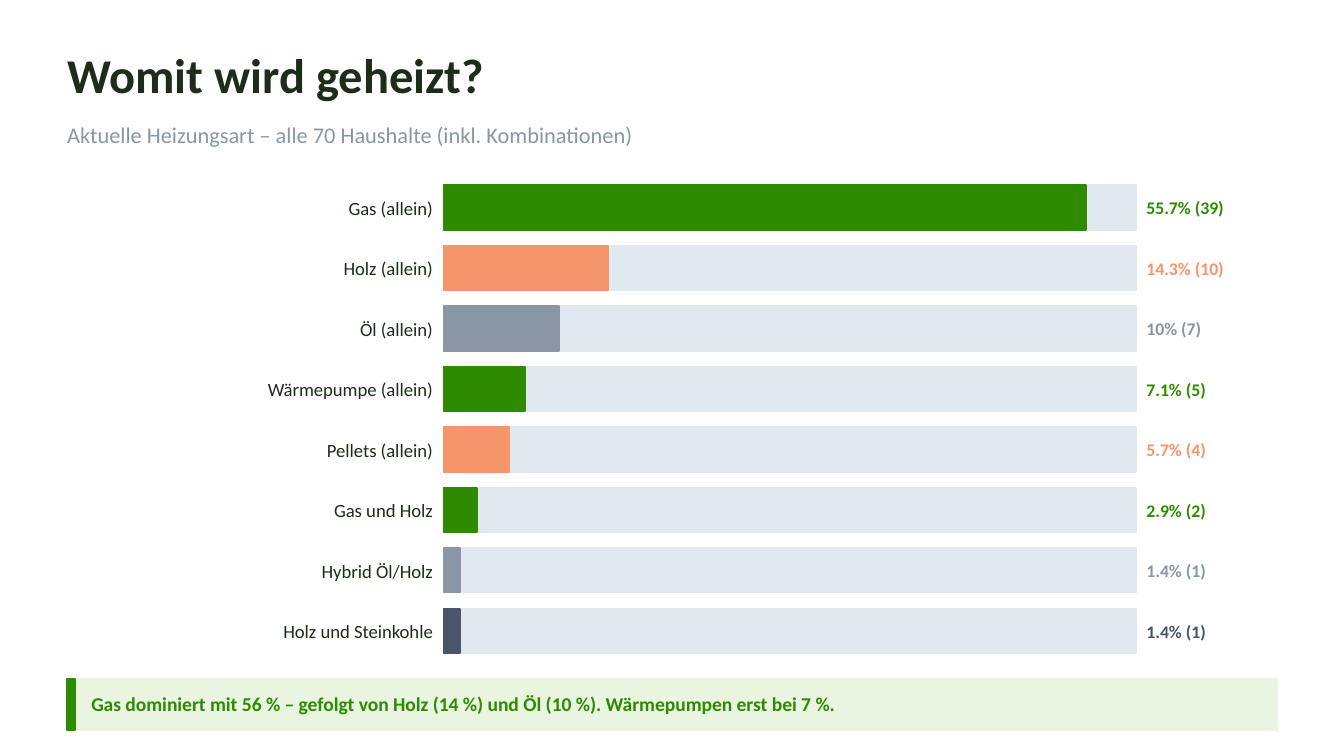
import pptx
import pptx.dml.color
import pptx.enum.shapes
import pptx.enum.text
import pptx.util
from pptx.util import Inches

COLORS = {
    "dark": "1D2D1A",
    "green": "2E8B00",
    "orange": "F4956A",
    "gray": "8896A5",
    "slate": "4A5568",
    "track": "E2E8F0",
    "pale": "E9F5E1",
}
ALIGN = pptx.enum.text.PP_ALIGN


def write_text(text, left, top, width, height, size, color,
               bold=False, align=ALIGN.LEFT, box=None):
    """Write one line into a new text box, or into the given placeholder."""
    if box is None:
        box = slide.shapes.add_textbox(0, 0, 0, 0)
    box.left, box.top = Inches(left), Inches(top)
    box.width, box.height = Inches(width), Inches(height)
    frame = box.text_frame
    frame.word_wrap = True
    frame.auto_size = pptx.enum.text.MSO_AUTO_SIZE.NONE
    frame.vertical_anchor = pptx.enum.text.MSO_ANCHOR.MIDDLE
    frame.margin_left = frame.margin_right = 0
    frame.margin_top = frame.margin_bottom = 0
    para = frame.paragraphs[0]
    para.alignment = align
    span = para.add_run()
    span.text = text
    span.font.name = "Calibri"
    span.font.size = pptx.util.Pt(size)
    span.font.bold = bold
    span.font.color.rgb = pptx.dml.color.RGBColor.from_string(COLORS[color])


def add_bar(left, top, width, height, color):
    bar = slide.shapes.add_shape(
        pptx.enum.shapes.MSO_SHAPE.RECTANGLE,
        Inches(left), Inches(top), Inches(width), Inches(height))
    bar.shadow.inherit = False
    rgb = pptx.dml.color.RGBColor.from_string(COLORS[color])
    bar.fill.solid()
    bar.fill.fore_color.rgb = rgb
    bar.line.color.rgb = rgb
    bar.line.width = pptx.util.Pt(1)


# A 16:9 page
deck = pptx.Presentation()
deck.slide_width = Inches(10)
deck.slide_height = Inches(10 * 9 / 16)
page_layout = deck.slide_layouts.get_by_name("Title Only")
slide = deck.slides.add_slide(page_layout)

# Title and subtitle
write_text("Womit wird geheizt?", 0.5, 0.28, 9, 0.55, size=26, color="dark",
           bold=True, box=slide.shapes.title)
write_text("Aktuelle Heizungsart – alle 70 Haushalte (inkl. Kombinationen)",
           0.5, 0.85, 9, 0.3, size=12, color="gray")

# Heating types: label, share in percent, households, color
heating_types = [
    ("Gas (allein)", 55.7, 39, "green"),
    ("Holz (allein)", 14.3, 10, "orange"),
    ("Öl (allein)", 10, 7, "gray"),
    ("Wärmepumpe (allein)", 7.1, 5, "green"),
    ("Pellets (allein)", 5.7, 4, "orange"),
    ("Gas und Holz", 2.9, 2, "green"),
    ("Hybrid Öl/Holz", 1.4, 1, "gray"),
    ("Holz und Steinkohle", 1.4, 1, "slate"),
]
bar_left, track_width, bar_height = 3.3, 5.15, 0.33
first_top, row_step = 1.38, 0.45
full_scale = 60  # percent shown by a full track

# Bars with label on the left and value on the right (set off by an en space)
for row, (label, share, households, color) in enumerate(heating_types):
    top = first_top + row * row_step
    add_bar(bar_left, top, track_width, bar_height, "track")
    add_bar(bar_left, top, track_width * share / full_scale, bar_height, color)
    write_text(label, 0.5, top - 0.01, 2.72, 0.35, size=10, color="dark",
               align=ALIGN.RIGHT)
    write_text(f"{share:g}% ({households})", 8.53, top, 0.9, bar_height,
               size=9.5, color=color, bold=True)

# Key message
add_bar(0.5, 5.05, 9, 0.38, "pale")
add_bar(0.5, 5.05, 0.06, 0.38, "green")
write_text("Gas dominiert mit 56 % – gefolgt von Holz (14 %) und Öl (10 %). "
           "Wärmepumpen erst bei 7 %.",
           0.68, 5.06, 8.7, 0.36, size=10.5, color="green", bold=True)

deck.save("out.pptx")
